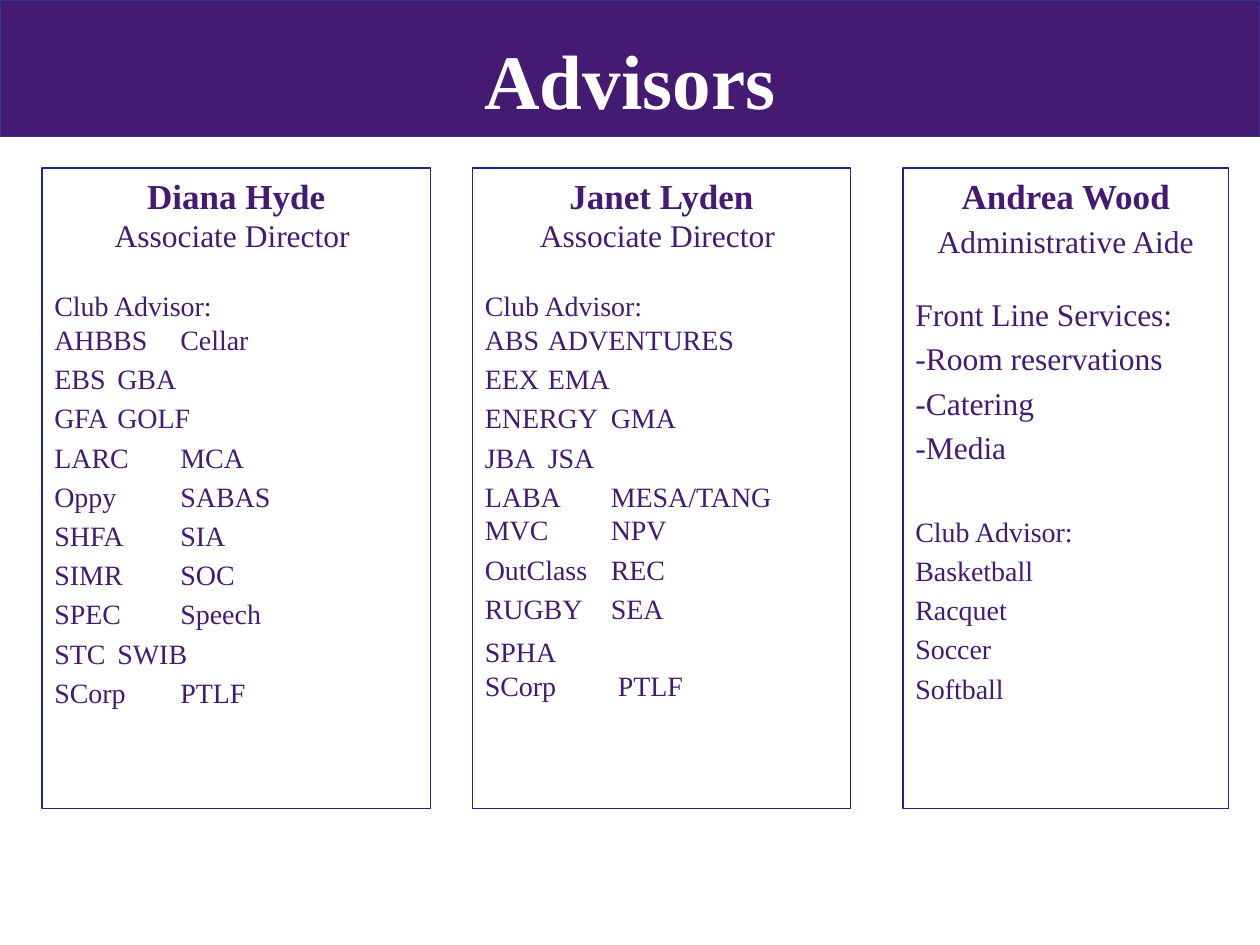
from pptx import Presentation
from pptx.dml.color import RGBColor
from pptx.enum.shapes import MSO_SHAPE
from pptx.enum.text import MSO_ANCHOR, PP_ALIGN
from pptx.util import Inches, Pt

PURPLE = RGBColor(0x45, 0x1A, 0x72)
NAVY = RGBColor(0x22, 0x22, 0x8B)
BLUE = RGBColor(0x33, 0x33, 0x99)
WHITE = RGBColor(0xFF, 0xFF, 0xFF)
FACE = "Times New Roman"
CELLS = 12  # grid cells per inch
TOP, HIGH = 16, 61  # grid rows shared by the cards

DIANA = [
    "Club Advisor:\vAHBBS \tCellar", "EBS \tGBA", "GFA \tGOLF",
    "LARC \tMCA", "Oppy \tSABAS", "SHFA \tSIA", "SIMR \tSOC",
    "SPEC \tSpeech", "STC \tSWIB", "SCorp\tPTLF",
]
JANET = [
    "Club Advisor:\vABS \tADVENTURES", "EEX \tEMA", "ENERGY \tGMA",
    "JBA \tJSA", "LABA \tMESA/TANG\vMVC \tNPV", "OutClass \tREC",
    "RUGBY \tSEA",
]
DESK = ["Front Line Services:", "-Room reservations", "-Catering", "-Media"]
SPORTS = ["Club Advisor:", "Basketball", "Racquet", "Soccer", "Softball"]


def grid(*cells):
    return [Inches(cell / CELLS) for cell in cells]


def style(font, size, color=PURPLE, bold=False):
    font.name, font.size, font.bold = FACE, Pt(size), bold
    font.color.rgb = color


def add_box(slide, cells, line, fill=None):
    box = slide.shapes.add_shape(MSO_SHAPE.RECTANGLE, *grid(*cells))
    box.shadow.inherit = False
    if fill is None:
        box.fill.background()
    else:
        box.fill.solid()
        box.fill.fore_color.rgb = fill
    box.line.color.rgb = line
    box.line.width = Pt(0.75)
    return box


def add_title(slide, text):
    add_box(slide, (0, 0, 120, 13), BLUE, PURPLE)
    frame = slide.shapes.add_textbox(*grid(20, 2, 80, 11)).text_frame
    frame.word_wrap = True
    frame.vertical_anchor = MSO_ANCHOR.MIDDLE
    para = frame.paragraphs[0]
    para.text = text
    para.alignment = PP_ALIGN.CENTER
    style(para.font, 44, WHITE, True)


def add_card(slide, left, width):
    """Draw an outlined card and return its text frame."""
    frame = add_box(slide, (left, TOP, width, HIGH), NAVY).text_frame
    frame.word_wrap = True
    frame.vertical_anchor = MSO_ANCHOR.TOP
    return frame


def add_head(frame, name, role, split=False):
    """Write name and role, as two paragraphs if split, else with a break."""
    para = frame.paragraphs[0]
    para.alignment = PP_ALIGN.CENTER
    run = para.add_run()
    run.text = name
    style(run.font, 20, bold=True)
    if split:
        para = frame.add_paragraph()
        para.alignment = PP_ALIGN.CENTER
        para.space_before = Pt(3.6)
    else:
        para.add_line_break()
    run = para.add_run()
    run.text = role
    style(run.font, 18)


def add_list(frame, lines, size, gap):
    """Add lines spaced by a fifth of their size, the first one by gap."""
    for i, line in enumerate(lines):
        para = frame.add_paragraph()
        para.text = line
        para.alignment = PP_ALIGN.LEFT
        para.space_before = Pt(size * 0.2 if i else gap)
        style(para.font, size)


def main():
    deck = Presentation()
    deck.slide_width, deck.slide_height = Inches(10), Inches(7.5)
    slide = deck.slides.add_slide(deck.slide_layouts[6])
    add_title(slide, "Advisors")

    card = add_card(slide, 4, 37)
    add_head(card, "Diana Hyde", "Associate Director ")
    add_list(card, DIANA, 16, 20)

    card = add_card(slide, 86, 31)
    add_head(card, "Andrea Wood", "Administrative Aide", split=True)
    add_list(card, DESK, 18, 20)
    add_list(card, SPORTS, 16, 28)

    card = add_card(slide, 45, 36)
    add_head(card, "Janet Lyden", "Associate Director ")
    add_list(card, JANET, 16, 20)
    add_list(card, ["SPHA\vSCorp\t PTLF"], 16, 5.6)

    deck.save("out.pptx")


if __name__ == "__main__":
    main()
